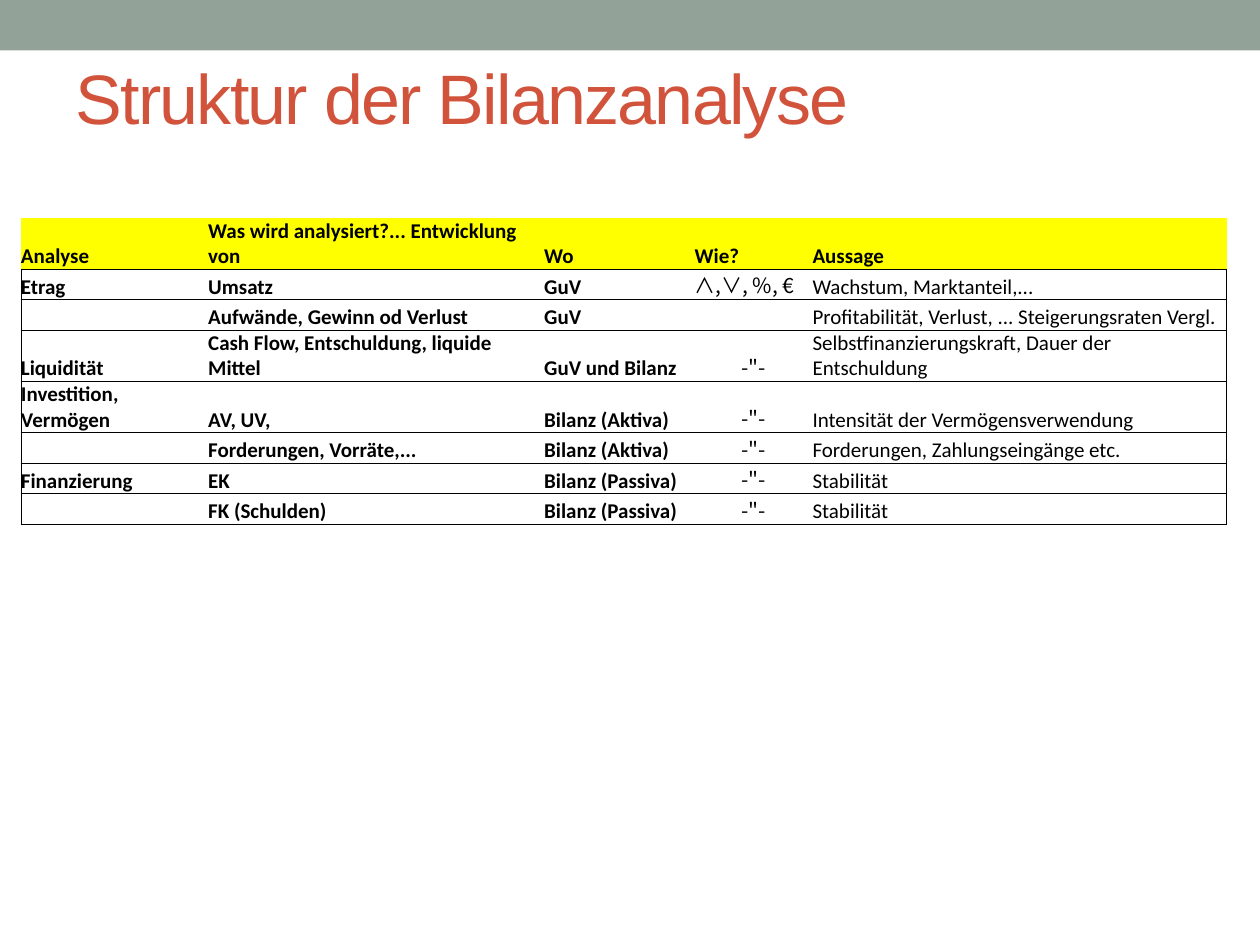
from lxml import etree
from pptx import Presentation
from pptx.dml.color import RGBColor
from pptx.enum.shapes import MSO_SHAPE
from pptx.enum.text import MSO_ANCHOR, MSO_AUTO_SIZE, PP_ALIGN
from pptx.oxml.ns import qn
from pptx.util import Pt

RECTANGLE = MSO_SHAPE.RECTANGLE
MIDDLE, BOTTOM = MSO_ANCHOR.MIDDLE, MSO_ANCHOR.BOTTOM
LEFT, CENTER = PP_ALIGN.LEFT, PP_ALIGN.CENTER
NO_AUTOFIT = MSO_AUTO_SIZE.NONE
PLAIN_TABLE_STYLE = "{2D5ABB26-0587-4C30-8999-92F81FD0307C}"

DITTO = '-"-'
ROWS = [
    ["Analyse", "Was wird analysiert?... Entwicklung von", "Wo", "Wie?", "Aussage"],
    ["Etrag", "Umsatz", "GuV", "∧,∨, %, €", "Wachstum, Marktanteil,..."],
    ["", "Aufwände, Gewinn od Verlust", "GuV", "",
     "Profitabilität, Verlust, ... Steigerungsraten Vergl."],
    ["Liquidität", "Cash Flow, Entschuldung, liquide Mittel", "GuV und Bilanz", DITTO,
     "Selbstfinanzierungskraft, Dauer der Entschuldung"],
    ["Investition, Vermögen", "AV, UV,", "Bilanz (Aktiva)", DITTO,
     "Intensität der Vermögensverwendung"],
    ["", "Forderungen, Vorräte,...", "Bilanz (Aktiva)", DITTO,
     "Forderungen, Zahlungseingänge etc."],
    ["Finanzierung", "EK", "Bilanz (Passiva)", DITTO, "Stabilität"],
    ["", "FK (Schulden)", "Bilanz (Passiva)", DITTO, "Stabilität"],
]
COLUMN_WIDTHS = [107, 192, 86, 67.4, 236.6]
TALL, SINGLE = 29.2, 17.4
ROW_HEIGHTS = [TALL, SINGLE, SINGLE, TALL, TALL, SINGLE, SINGLE, SINGLE]
RULED_ROWS = {0, 2, 3, 4, 5, 7}
HOW_COLUMN, STATEMENT_COLUMN = 3, 4


def color(value):
    return RGBColor.from_string(value)


def add_border(cell, side):
    """Draw a thin black line on one side (L, R, T or B) of a cell."""
    properties = cell._tc.get_or_add_tcPr()
    line = etree.SubElement(properties, qn(f"a:ln{side}"), w=str(Pt(0.5)))
    fill = etree.SubElement(line, qn("a:solidFill"))
    etree.SubElement(fill, qn("a:srgbClr"), val="000000")


presentation = Presentation()
presentation.slide_width = Pt(720)
presentation.slide_height = Pt(540)
slide = presentation.slides.add_slide(presentation.slide_layouts[5])

top_band = slide.shapes.add_shape(RECTANGLE, 0, 0, Pt(720), Pt(28.8))
top_band.shadow.inherit = False
top_band.fill.solid()
top_band.fill.fore_color.rgb = color("93A299")
top_band.line.fill.background()

title = slide.shapes.title
title.left, title.top, title.width, title.height = Pt(36), Pt(16), Pt(648), Pt(78)
title.text_frame.text = "Struktur der Bilanzanalyse"
title.text_frame.auto_size = NO_AUTOFIT
title.text_frame.vertical_anchor = MIDDLE
paragraph = title.text_frame.paragraphs[0]
paragraph.alignment = LEFT
paragraph.font.name = "Arial"
paragraph.font.size = Pt(40)
paragraph.font.color.rgb = color("D2533C")
paragraph.runs[0]._r.get_or_add_rPr().set("spc", "-100")

table_frame = slide.shapes.add_table(
    len(ROWS), len(COLUMN_WIDTHS), Pt(12), Pt(124.6),
    Pt(sum(COLUMN_WIDTHS)), Pt(sum(ROW_HEIGHTS)))
table = table_frame.table
table.first_row = False
table.horz_banding = False
table._tbl.tblPr.find(qn("a:tableStyleId")).text = PLAIN_TABLE_STYLE
for column, width in zip(table.columns, COLUMN_WIDTHS):
    column.width = Pt(width)
for row, height in zip(table.rows, ROW_HEIGHTS):
    row.height = Pt(height)

for row_index, texts in enumerate(ROWS):
    is_header = row_index == 0
    for column_index, text in enumerate(texts):
        cell = table.cell(row_index, column_index)
        cell.margin_left = cell.margin_right = cell.margin_top = cell.margin_bottom = 0
        cell.vertical_anchor = BOTTOM

        ruled_rows = RULED_ROWS | {6} if column_index == HOW_COLUMN else RULED_ROWS
        if column_index == 0 and not is_header:
            add_border(cell, "L")
        if column_index == STATEMENT_COLUMN and not is_header:
            add_border(cell, "R")
        if row_index - 1 in ruled_rows:
            add_border(cell, "T")
        if row_index in ruled_rows:
            add_border(cell, "B")

        if is_header:
            cell.fill.solid()
            cell.fill.fore_color.rgb = color("FFFF00")
        else:
            cell.fill.background()

        is_symbol = column_index == HOW_COLUMN and not is_header
        paragraph = cell.text_frame.paragraphs[0]
        paragraph.text = text
        paragraph.alignment = CENTER if text == DITTO else LEFT
        paragraph.font.name = "Noto Sans CJK JP" if is_symbol else "Calibri"
        paragraph.font.size = Pt(12)
        paragraph.font.bold = is_header or column_index < HOW_COLUMN
        paragraph.font.color.rgb = color("000000")

presentation.save("out.pptx")
